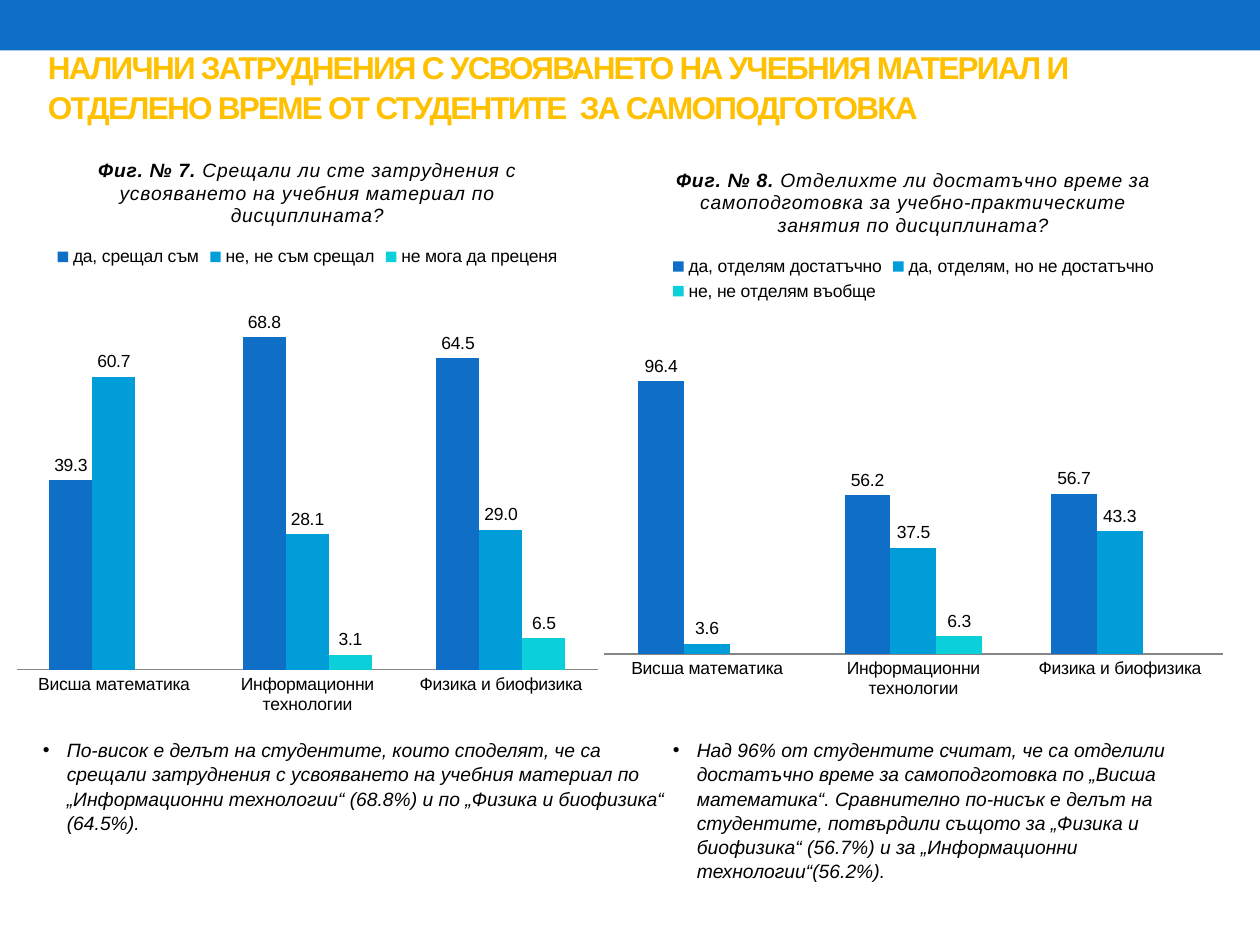
from lxml import etree
from pptx import Presentation
from pptx import util as u
from pptx.chart.data import CategoryChartData
from pptx.dml.color import RGBColor
from pptx.enum import chart as ch, shapes, text
from pptx.oxml import ns

FONT = "Arial"
BLACK, BLUE, GOLD, GRAY = "000000", "0F6FC6", "FFC000", "868686"
SERIES_COLORS = [BLUE, "009DD9", "0BD0D9"]
SUBJECTS = ["Висша математика", "Информационни технологии", "Физика и биофизика"]


def color(fmt, value):
    fmt.rgb = RGBColor.from_string(value)


def place(sp, box):
    sp.left, sp.top, sp.width, sp.height = [u.Pt(v) for v in box]


def style(font, size, value=BLACK, bold=False, italic=False):
    font.name, font.size = FONT, u.Pt(size)
    font.bold, font.italic = bold, italic
    color(font.color, value)


def add_run(p, words, size, value=BLACK, bold=False, italic=False, spacing=0):
    r = p.add_run()
    r.text = words
    style(r.font, size, value, bold, italic)
    if spacing:
        r.font._element.set("spc", str(int(spacing * 100)))


def add_banner(s):
    sp = s.shapes.add_shape(shapes.MSO_SHAPE.RECTANGLE, 0, 0, u.Pt(720), u.Pt(28.8))
    sp.fill.solid()
    color(sp.fill.fore_color, BLUE)
    sp.line.fill.background()
    sp.shadow.inherit = False


def set_title(s, words):
    sp = s.shapes.title
    place(sp, (20.2, 15.1, 680.4, 67.7))
    tf = sp.text_frame
    tf.auto_size = text.MSO_AUTO_SIZE.NONE
    tf.vertical_anchor = text.MSO_ANCHOR.MIDDLE
    p = tf.paragraphs[0]
    p.alignment = text.PP_ALIGN.LEFT
    p.line_spacing = 1.05
    add_run(p, words, 18, GOLD, bold=True, spacing=-1)


def set_bullet(sp, box, words):
    place(sp, box)
    tf = sp.text_frame
    tf.auto_size = text.MSO_AUTO_SIZE.NONE
    p = tf.paragraphs[0]
    pPr = p._p.get_or_add_pPr()
    indent = u.Pt(13.7)
    pPr.set("marL", str(indent))
    pPr.set("indent", str(-indent))
    etree.SubElement(pPr, ns.qn("a:buChar")).set("char", "•")
    p.space_before, p.space_after = u.Pt(0), u.Pt(10)
    p.line_spacing = 1.05
    add_run(p, words, 11, italic=True)


def set_plot_area(chart, box):
    """Fix the inner plot area, given as fractions of the chart."""
    plot_area = chart._chartSpace.chart.plotArea
    for old in plot_area.findall(ns.qn("c:layout")):
        plot_area.remove(old)
    layout = etree.Element(ns.qn("c:layout"))
    manual = etree.SubElement(layout, ns.qn("c:manualLayout"))
    values = [("layoutTarget", "inner"), ("xMode", "edge"), ("yMode", "edge")]
    values += zip("xywh", box)
    for tag, value in values:
        etree.SubElement(manual, ns.qn("c:" + tag)).set("val", str(value))
    plot_area.insert(0, layout)


def add_column_chart(s, box, plot_box, number, question, series, top, fmt):
    data = CategoryChartData(number_format=fmt)
    data.categories = SUBJECTS
    for name, values in series:
        data.add_series(name, values)
    chart = s.shapes.add_chart(ch.XL_CHART_TYPE.COLUMN_CLUSTERED,
                               *[u.Pt(v) for v in box], data).chart
    style(chart.font, 10)
    set_plot_area(chart, plot_box)

    # Title and legend
    chart.has_title = True
    chart.chart_title.include_in_layout = False
    p = chart.chart_title.text_frame.paragraphs[0]
    add_run(p, f"Фиг. № {number}. ", 11, bold=True, italic=True, spacing=0.3)
    add_run(p, question, 11, italic=True, spacing=0.3)
    chart.has_legend = True
    chart.legend.position = ch.XL_LEGEND_POSITION.TOP
    chart.legend.include_in_layout = False
    style(chart.legend.font, 10)

    # Axes
    cat, val = chart.category_axis, chart.value_axis
    cat.major_tick_mark = ch.XL_TICK_MARK.NONE
    color(cat.format.line.color, GRAY)
    style(cat.tick_labels.font, 10)
    val.visible = False
    val.has_major_gridlines = False
    val.minimum_scale, val.maximum_scale = 0, top

    # Columns and their values
    plot = chart.plots[0]
    plot.gap_width, plot.overlap = 150, 0
    plot.vary_by_categories = False
    for ser, value in zip(plot.series, SERIES_COLORS):
        ser.format.fill.solid()
        color(ser.format.fill.fore_color, value)
        labels = ser.data_labels
        labels.show_value = True
        labels.position = ch.XL_LABEL_POSITION.OUTSIDE_END
        labels.number_format, labels.number_format_is_linked = fmt, False
        style(labels.font, 10)


def main():
    prs = Presentation()
    prs.slide_width, prs.slide_height = u.Pt(720), u.Pt(540)
    s = prs.slides.add_slide(prs.slide_layouts[3])

    # Heading
    add_banner(s)
    set_title(s, "НАЛИЧНИ ЗАТРУДНЕНИЯ С УСВОЯВАНЕТО НА УЧЕБНИЯ МАТЕРИАЛ И "
                 "ОТДЕЛЕНО ВРЕМЕ ОТ СТУДЕНТИТЕ  ЗА САМОПОДГОТОВКА")

    # Findings under the charts
    set_bullet(s.placeholders[1], (17.3, 417.6, 376.6, 96.5),
               "По-висок е делът на студентите, които споделят, че са срещали "
               "затруднения с усвояването на учебния материал по „Информационни "
               "технологии“ (68.8%) и по „Физика и биофизика“ (64.5%).")
    set_bullet(s.placeholders[2], (377.3, 417.6, 329, 96.5),
               "Над 96% от студентите считат, че са отделили достатъчно време за "
               "самоподготовка по „Висша математика“. Сравнително по-нисък е делът "
               "на студентите, потвърдили същото за „Физика и биофизика“ (56.7%) и "
               "за „Информационни технологии“(56.2%).")

    # Charts
    add_column_chart(
        s, (2.9, 77, 345.6, 339.8), (0.02, 0.25, 0.96, 0.65), 7,
        "Срещали ли сте затруднения с усвояването на учебния материал по дисциплината?",
        [("да, срещал съм", (39.3, 68.8, 64.5)),
         ("не, не съм срещал", (60.7, 28.1, 29)),
         ("не мога да преценя", (None, 3.1, 6.5))], 80, "0.0")
    add_column_chart(
        s, (337.7, 82.8, 368.6, 323.3), (0.02, 0.3, 0.96, 0.6), 8,
        "Отделихте ли достатъчно време за самоподготовка за учебно-практическите "
        "занятия по дисциплината?",
        [("да, отделям достатъчно", (96.4, 56.2, 56.7)),
         ("да, отделям, но не достатъчно", (3.6, 37.5, 43.3)),
         ("не, не отделям въобще", (None, 6.3, None))], 120, "General")
    prs.save("out.pptx")


if __name__ == "__main__":
    main()
